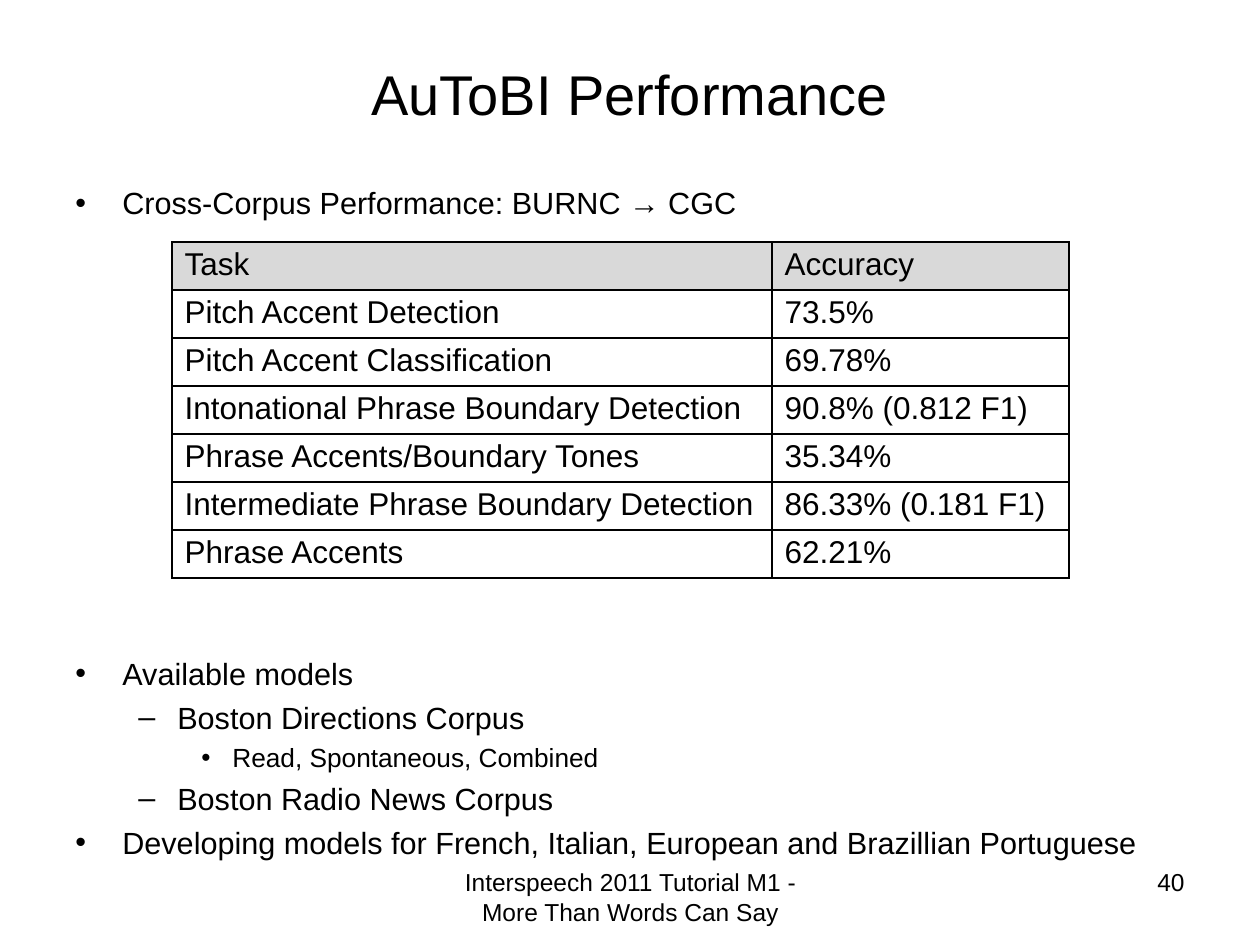
from lxml import etree
from pptx import Presentation
from pptx import util as u
from pptx.dml.color import RGBColor
from pptx.enum import text
from pptx.oxml import ns

PX = 914400 / 126
BLACK = RGBColor(0x00, 0x00, 0x00)
GREY = RGBColor(0xD9, 0xD9, 0xD9)
FONT = "Arial"
LEFT, MID, RIGHT = text.PP_ALIGN.LEFT, text.PP_ALIGN.CENTER, text.PP_ALIGN.RIGHT

TASKS = [
    ("Task", "Accuracy"),
    ("Pitch Accent Detection", "73.5%"),
    ("Pitch Accent Classification", "69.78%"),
    ("Intonational Phrase Boundary Detection", "90.8% (0.812 F1)"),
    ("Phrase Accents/Boundary Tones", "35.34%"),
    ("Intermediate Phrase Boundary Detection", "86.33% (0.181 F1)"),
    ("Phrase Accents", "62.21%"),
]
TABLE_GAP = 248
POINTS = [
    (0, 0, "Cross-Corpus Performance: BURNC → CGC"),
    (0, TABLE_GAP, "Available models"),
    (1, 4, "Boston Directions Corpus"),
    (2, 3.5, "Read, Spontaneous, Combined"),
    (1, 4, "Boston Radio News Corpus"),
    (0, 4, "Developing models for French, Italian, European and Brazillian Portuguese"),
]
LEVELS = [("•", 47, 47, 17.5), ("–", 102, 39, 17.5), ("•", 157, 31, 15)]


def px(n):
    return u.Emu(round(n * PX))


def style(para, size, align=LEFT):
    para.alignment = align
    for run in para.runs:
        font = run.font
        font.name, font.size, font.bold = FONT, u.Pt(size), False
        font.color.rgb = BLACK


def add_box(slide, box):
    frame = slide.shapes.add_textbox(*map(px, box)).text_frame
    frame.word_wrap = True
    return frame


def add_label(slide, box, words, size, align, anchor=text.MSO_ANCHOR.TOP):
    frame = add_box(slide, box)
    frame.vertical_anchor = anchor
    frame.text = words
    style(frame.paragraphs[0], size, align)


def set_bullet(para, mark, left, hang):
    props = para._p.get_or_add_pPr()
    props.set("marL", str(px(left)))
    props.set("indent", str(-px(hang)))
    etree.SubElement(props, ns.qn("a:buFont"), typeface=FONT)
    etree.SubElement(props, ns.qn("a:buChar"), char=mark)


def add_points(slide, box):
    frame = add_box(slide, box)
    for i, (level, gap, words) in enumerate(POINTS):
        para = frame.add_paragraph() if i else frame.paragraphs[0]
        mark, left, hang, size = LEVELS[level]
        para.text = words
        para.level = level
        para.space_before = u.Pt(gap)
        style(para, size)
        set_bullet(para, mark, left, hang)


def set_border(cell):
    props = cell._tc.get_or_add_tcPr()
    for side in ("lnL", "lnR", "lnT", "lnB"):
        line = etree.SubElement(props, ns.qn("a:" + side), w=str(u.Pt(1)))
        fill = etree.SubElement(line, ns.qn("a:solidFill"))
        etree.SubElement(fill, ns.qn("a:srgbClr"), val=str(BLACK))


def add_scores(slide, box):
    left, top, width, height = box
    rows = len(TASKS)
    table = slide.shapes.add_table(rows, 2, *map(px, box)).table
    first = 600
    for col, size in zip(table.columns, (first, width - first)):
        col.width = px(size)
    for r, (row, words) in enumerate(zip(table.rows, TASKS)):
        row.height = px(height / rows)
        for cell, word in zip(row.cells, words):
            cell.text = word
            cell.margin_top = cell.margin_bottom = px(5)
            style(cell.text_frame.paragraphs[0], 18)
            set_border(cell)
            if r:
                cell.fill.background()
            else:
                cell.fill.solid()
                cell.fill.fore_color.rgb = GREY


def main():
    deck = Presentation()
    deck.slide_width, deck.slide_height = px(1260), px(945)
    slide = deck.slides.add_slide(deck.slide_layouts[6])
    add_label(slide, (63, 38, 1134, 110), "AuToBI Performance", 32, MID,
              text.MSO_ANCHOR.MIDDLE)
    add_points(slide, (63, 178, 1134, 699))
    add_label(slide, (903, 861, 294, 65), "40", 14, RIGHT)
    add_scores(slide, (172, 242, 897, 336))
    add_label(slide, (431, 861, 399, 65),
              "Interspeech 2011 Tutorial M1 - More Than Words Can Say", 14, MID)
    deck.save("out.pptx")


if __name__ == "__main__":
    main()
